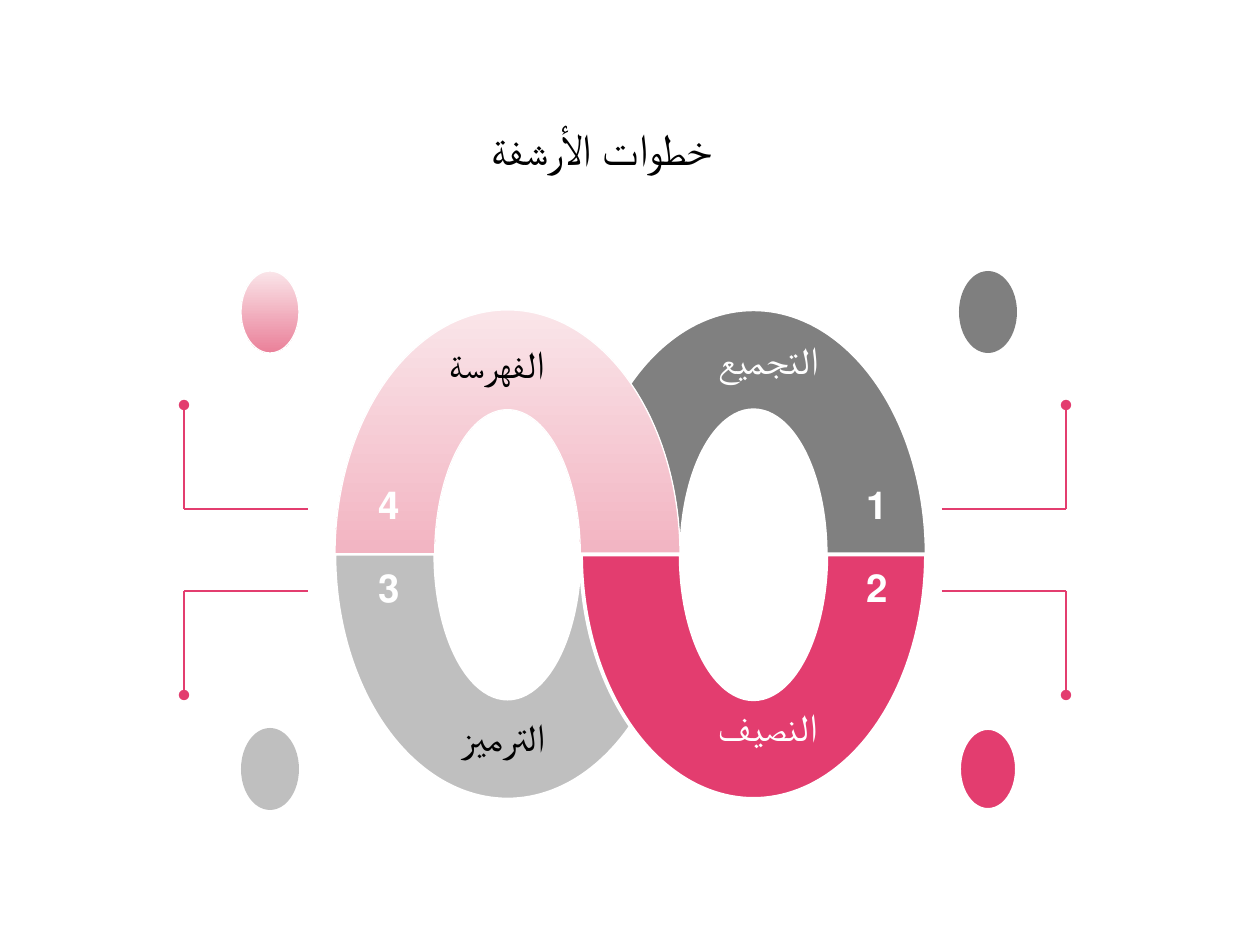
from lxml import etree
from pptx import Presentation
from pptx.dml.color import RGBColor
from pptx.enum.shapes import MSO_CONNECTOR, MSO_SHAPE
from pptx.enum.text import MSO_ANCHOR, PP_ALIGN
from pptx.oxml.ns import qn
from pptx.util import Pt

PX = 914400 / 126
ARC, OVAL = MSO_SHAPE.BLOCK_ARC, MSO_SHAPE.OVAL
STRAIGHT = MSO_CONNECTOR.STRAIGHT
TOP = MSO_ANCHOR.TOP
CENTER, JUSTIFY = PP_ALIGN.CENTER, PP_ALIGN.JUSTIFY

WHITE, BLACK, ROSE = "FFFFFF", "000000", "E33D6F"
BLUSH = ("FAE5E9", "EA8099")

TITLE = "خطوات الأرشفة"
# number, label, label place, text colour, (column, row), arc fill, arc line, dot fill, dot line
STEPS = [
    ("1", "التجميع", (718, 336), WHITE, (1, 0), "808080", 1.5, "7F7F7F", 0),
    ("4", "الفهرسة", (449, 340), BLACK, (0, 0), BLUSH, 0.75, BLUSH, 0.75),
    ("3", "الترميز", (461, 713), BLACK, (0, 1), "BFBFBF", 1.5, "BFBFBF", 0),
    ("2", "النصيف", (718, 703), WHITE, (1, 1), ROSE, 2.25, ROSE, 2.25),
]
# Places by column (left, right) and by row (top, bottom)
ARC_X, ARC_Y, ARC_SIZE = (335, 581), 310, (345, 489)
ARC_ADJ = (107.995, 0.024, 0.289)
NUM_X, NUM_Y, NUM_SIZE = (359, 847), (475, 558), (53, 59)
DOT_X, DOT_Y, DOT_SIZE = (241, 959), (271, 728), (58, 82)
NEAR_X, FAR_X = (308, 942), (184, 1066)
BEND_Y, END_Y = (509, 591), (405, 695)
LABEL_SIZE = (169, 64)


def emu(*nums):
    return [round(n * PX) for n in nums]


def rgb(code):
    return RGBColor.from_string(code)


def add_form(kind, place, size, fill, width):
    form = slide.shapes.add_shape(kind, *emu(*place, *size))
    form.shadow.inherit = False
    if isinstance(fill, tuple):
        form.fill.gradient()
        form.fill.gradient_angle = 270
        for stop, code in zip(form.fill.gradient_stops, fill):
            stop.color.rgb = rgb(code)
    else:
        form.fill.solid()
        form.fill.fore_color.rgb = rgb(fill)
    if width:
        form.line.color.rgb = rgb(WHITE)
        form.line.width = Pt(width)
    else:
        form.line.fill.background()
    return form


def write(box, text, color, align, rtl=False, **style):
    frame = box.text_frame
    frame.text = text
    frame.vertical_anchor = TOP
    para = frame.paragraphs[0]
    para.alignment = align
    if rtl:
        para._p.get_or_add_pPr().set("rtl", "1")
    font = para.runs[0].font
    font.color.rgb = rgb(color)
    for key, val in style.items():
        setattr(font, key, val)
    return frame


def add_line(start, end, dot=False):
    line = slide.shapes.add_connector(STRAIGHT, *emu(*start, *end))
    line.line.color.rgb = rgb(ROSE)
    line.line.width = Pt(0.75)
    if dot:
        etree.SubElement(line.line._get_or_add_ln(), qn("a:tailEnd"), type="oval")
    etree.SubElement(line._element.spPr, qn("a:effectLst"))


prs = Presentation()
prs.slide_width, prs.slide_height = emu(1260, 945)
slide = prs.slides.add_slide(prs.slide_layouts[5])

title = slide.shapes.title
title.left, title.top, title.width, title.height = emu(296, 115, 611, 66)
write(title, TITLE, BLACK, CENTER, rtl=True, size=Pt(25), name="Arial")

for _, _, _, _, (col, row), fill, width, _, _ in STEPS:
    arc = add_form(ARC, (ARC_X[col], ARC_Y), ARC_SIZE, fill, width)
    for i, val in enumerate(ARC_ADJ):
        arc.adjustments[i] = val
    if row:
        arc._element.spPr.xfrm.set("flipV", "1")

for num, label, place, color, (col, row), _, _, fill, width in STEPS:
    box = slide.shapes.add_textbox(*emu(NUM_X[col], NUM_Y[row], *NUM_SIZE))
    frame = write(box, num, WHITE, JUSTIFY, rtl=True,
                  size=Pt(22), name="Quicksand", bold=True)
    frame.word_wrap = False

    box = slide.shapes.add_textbox(*emu(*place, *LABEL_SIZE))
    frame = write(box, label, color, JUSTIFY, size=Pt(22), name="Lato")
    frame.word_wrap = True
    for side in ("left", "top", "right", "bottom"):
        setattr(frame, "margin_" + side, 0)

    add_form(OVAL, (DOT_X[col], DOT_Y[row]), DOT_SIZE, fill, width)
    bend = (FAR_X[col], BEND_Y[row])
    add_line((NEAR_X[col], BEND_Y[row]), bend)
    add_line(bend, (FAR_X[col], END_Y[row]), dot=True)

prs.save("out.pptx")
